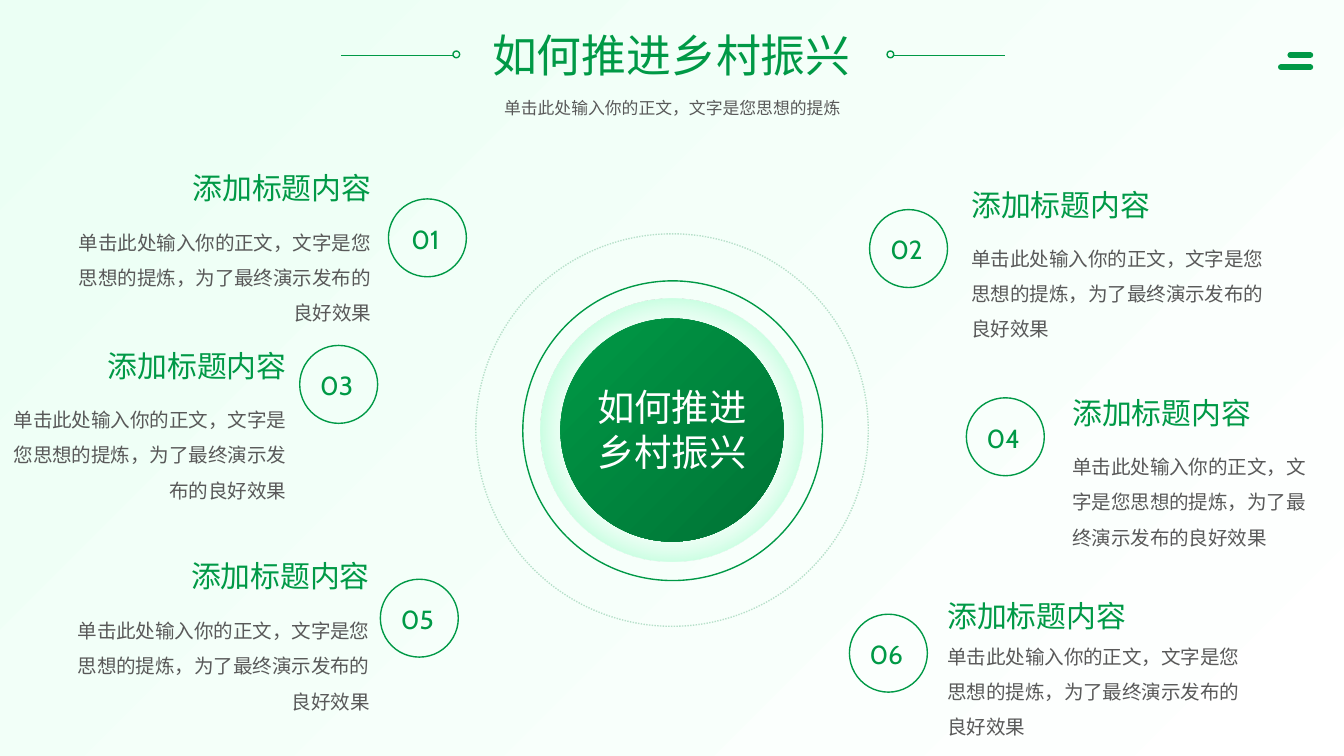
"""Build a slide with six numbered points around a central topic."""
from lxml.etree import SubElement
from pptx import Presentation
from pptx.dml.color import RGBColor
from pptx.enum.dml import MSO_LINE
from pptx.enum.shapes import MSO_CONNECTOR, MSO_SHAPE
from pptx.enum.text import PP_ALIGN
from pptx.oxml import parse_xml
from pptx.oxml.ns import qn
from pptx.util import Inches, Pt

COLORS = {
    "green": "009946", "deep": "007335", "pale": "B7E0CA", "grey": "595959",
    "mint": "EBFFF4", "white": "FFFFFF", "glow": "B8FFD8", "glow_edge": "29FF8B",
}
CJK = "Noto Sans CJK SC"
HEADING = "添加标题内容"
BODY = "单击此处输入你的正文，文字是您思想的提炼，为了最终演示发布的良好效果"

prs = Presentation()
prs.slide_width, prs.slide_height = Inches(10), Inches(10 * 9 / 16)
slide = prs.slides.add_slide(prs.slide_layouts[6])


def add_text(box, lines, size, color, align=PP_ALIGN.CENTER, font=CJK, spacing=None, wrap=True):
    frame = slide.shapes.add_textbox(*map(Inches, box)).text_frame
    frame.word_wrap = wrap
    for index, line in enumerate(lines):
        paragraph = frame.add_paragraph() if index else frame.paragraphs[0]
        paragraph.alignment = align
        paragraph.line_spacing = spacing
        run = paragraph.add_run()
        run.text = line
        run.font.name = font
        run.font.size = Pt(size)
        run.font.color.rgb = RGBColor.from_string(COLORS[color])
        SubElement(run.font._element, qn("a:ea"), typeface=font)


def add_circle(left, top, size, line=None):
    circle = slide.shapes.add_shape(
        MSO_SHAPE.OVAL, Inches(left), Inches(top), Inches(size), Inches(size))
    circle.shadow.inherit = False
    circle.fill.background()
    if line:
        circle.line.color.rgb = RGBColor.from_string(COLORS[line])
        circle.line.width = Pt(0.75)
    else:
        circle.line.fill.background()
    return circle


add_text((3.15, 0.16, 3.69, 0.5), ["如何推进乡村振兴"], 24, "green")
add_text((3.61, 0.68, 2.78, 0.25), ["单击此处输入你的正文，文字是您思想的提炼"], 9, "grey")

for dot_left in (3.37, 6.6):
    add_circle(dot_left, 0.38, 0.05, "green")

for start, end, y, width in (
    (3.37, 2.54, 0.41, 0.5),
    (6.65, 7.48, 0.41, 0.5),
    (9.6, 9.75, 0.41, 3),
    (9.53, 9.75, 0.5, 3),
):
    rule = slide.shapes.add_connector(
        MSO_CONNECTOR.STRAIGHT, Inches(start), Inches(y), Inches(end), Inches(y))
    rule.line.color.rgb = RGBColor.from_string(COLORS["green"])
    rule.line.width = Pt(width)
    if width == 3:
        rule._element.spPr.find(qn("a:ln")).set("cap", "rnd")
    SubElement(rule._element.spPr, qn("a:effectLst"))

halo = add_circle(4.02, 2.22, 1.96)
no_fill = halo._element.spPr.find(qn("a:noFill"))
halo._element.spPr.replace(no_fill, parse_xml(
    '<a:gradFill xmlns:a="http://schemas.openxmlformats.org/drawingml/2006/main"><a:gsLst>'
    f'<a:gs pos="54000"><a:srgbClr val="{COLORS["glow"]}"><a:alpha val="0"/></a:srgbClr></a:gs>'
    f'<a:gs pos="100000"><a:srgbClr val="{COLORS["glow_edge"]}"/></a:gs></a:gsLst>'
    '<a:path path="circle"><a:fillToRect l="50000" t="50000" r="50000" b="50000"/></a:path>'
    '</a:gradFill>'))

topic_disc = add_circle(4.17, 2.37, 1.66)
for fill, names in (
    (slide.background.fill, ("mint", "white")),
    (topic_disc.fill, ("green", "deep")),
):
    fill.gradient()
    fill.gradient_angle = 315
    for stop, position, name in zip(fill.gradient_stops, (0, 1), names):
        stop.position = position
        stop.color.rgb = RGBColor.from_string(COLORS[name])

outer_ring = add_circle(3.54, 1.74, 2.92, "pale")
outer_ring.line.dash_style = MSO_LINE.ROUND_DOT
add_circle(3.89, 2.09, 2.23, "green")
add_text((4.34, 2.81, 1.32, 0.77), ["如何推进", "乡村振兴"], 20, "white", wrap=False)

for number, badge_left, badge_top, edge, heading_top, body_width, body_gap in (
    ("01", 2.89, 1.48, 2.86, 1.21, 2.51, 0.37),
    ("02", 6.47, 1.56, 7.13, 1.34, 2.51, 0.36),
    ("03", 2.23, 2.57, 2.23, 2.54, 2.23, 0.36),
    ("04", 7.19, 2.96, 7.88, 2.89, 2.01, 0.36),
    ("05", 2.83, 4.31, 2.85, 4.1, 2.51, 0.37),
    ("06", 6.32, 4.57, 6.95, 4.4, 2.51, 0.26),
):
    on_left = edge < 5
    align = PP_ALIGN.RIGHT if on_left else PP_ALIGN.LEFT
    heading_left, body_left = (edge - w if on_left else edge for w in (2.12, body_width))
    add_circle(badge_left, badge_top, 0.58, "green")
    add_text((badge_left, badge_top + 0.13, 0.55, 0.34), [number], 14, "green", font="Cabin")
    add_text((heading_left, heading_top, 2.12, 0.37), [HEADING], 16, "green", align)
    add_text((body_left, heading_top + body_gap, body_width, 0.87), [BODY], 10.5, "grey",
             align, spacing=1.5)

prs.save("out.pptx")
